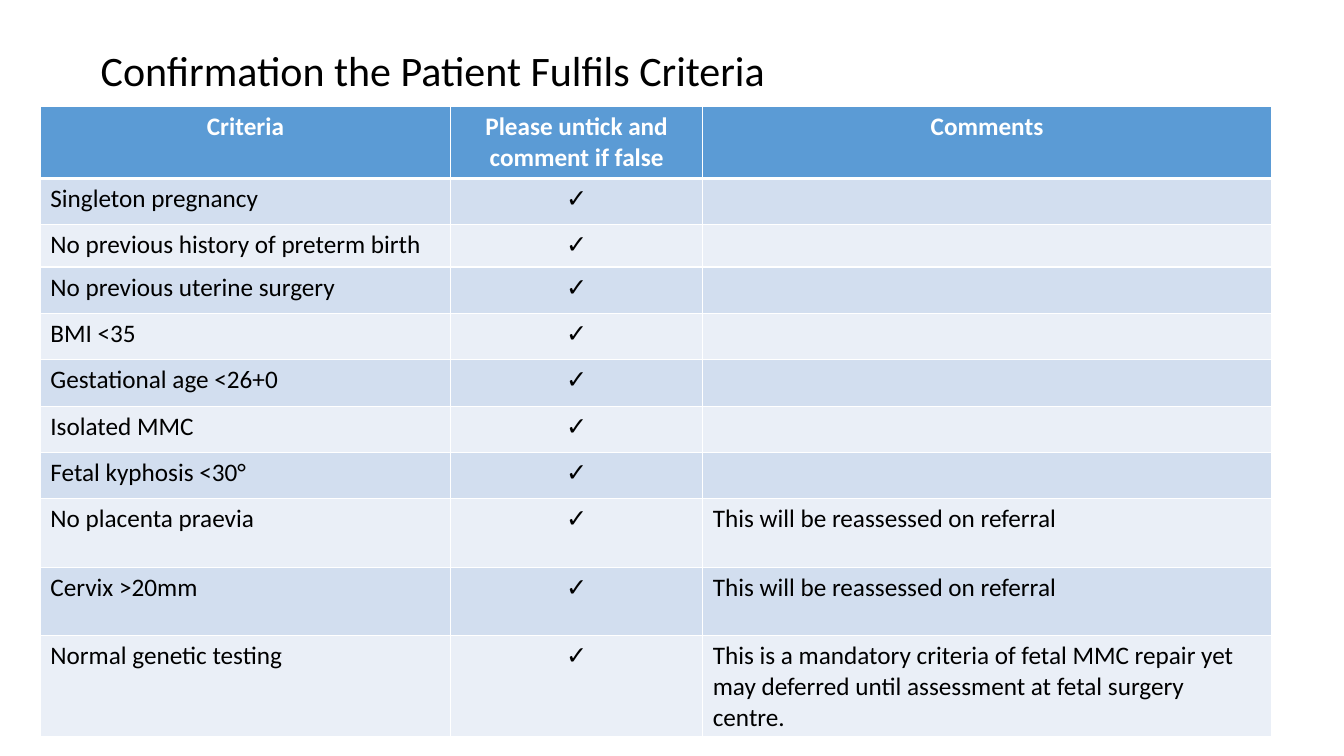
from lxml import etree
from pptx import Presentation
from pptx.dml.color import RGBColor
from pptx.enum.text import MSO_ANCHOR, PP_ALIGN
from pptx.oxml.ns import qn
from pptx.util import Inches, Pt

CENTER, LEFT = PP_ALIGN.CENTER, PP_ALIGN.LEFT
MIDDLE = MSO_ANCHOR.MIDDLE

BLACK = RGBColor(0x00, 0x00, 0x00)
WHITE = RGBColor(0xFF, 0xFF, 0xFF)
HEADER_BLUE = RGBColor(0x5B, 0x9B, 0xD5)
BAND_FILLS = (RGBColor(0xD2, 0xDE, 0xEF), RGBColor(0xEA, 0xEF, 0xF7))

FONT = "Calibri"
TICK = "✓"
TITLE = "Confirmation the Patient Fulfils Criteria"
HEADERS = ("Criteria", "Please untick and comment if false", "Comments")
REASSESSED = "This will be reassessed on referral"

# Criterion, comment, row height in inches
CRITERIA = (
    ("Singleton pregnancy", "", 0.46),
    ("No previous history of preterm birth", "", 0.42),
    ("No previous uterine surgery", "", 0.46),
    ("BMI <35", "", 0.46),
    ("Gestational age <26+0", "", 0.46),
    ("Isolated MMC", "", 0.46),
    ("Fetal kyphosis <30°", "", 0.46),
    ("No placenta praevia", REASSESSED, 0.68),
    ("Cervix >20mm", REASSESSED, 0.68),
    ("Normal genetic testing",
     "This is a mandatory criteria of fetal MMC repair yet may deferred "
     "until assessment at fetal surgery centre.", 0.77),
)
HEADER_HEIGHT = 0.71
COLUMN_WIDTHS = (4.07, 2.5, 5.64)


def format_paragraph(para, size, color, bold=False, align=LEFT):
    para.alignment = align
    # The paragraph font also sizes cells that hold no text
    for font in [para.font] + [span.font for span in para.runs]:
        font.name, font.size, font.bold = FONT, Pt(size), bold
        font.color.rgb = color


def set_borders(cell, bottom_width):
    """Draw white lines on all sides; they must precede the cell fill."""
    properties = cell._tc.get_or_add_tcPr()
    for side, width in (("L", 1), ("R", 1), ("T", 1), ("B", bottom_width)):
        line = etree.SubElement(properties, qn(f"a:ln{side}"), w=str(Pt(width)))
        fill = etree.SubElement(line, qn("a:solidFill"))
        etree.SubElement(fill, qn("a:srgbClr"), val=str(WHITE))


def add_title(page, left, top, width, height):
    box = page.shapes.add_textbox(*map(Inches, (left, top, width, height)))
    frame = box.text_frame
    frame.word_wrap = True
    frame.vertical_anchor = MIDDLE
    frame.text = TITLE
    para = frame.paragraphs[0]
    para.line_spacing = 0.9
    format_paragraph(para, 30, BLACK)


def add_criteria_table(page, left, top):
    rows = [HEADERS] + [(name, TICK, comment) for name, comment, _ in CRITERIA]
    heights = [HEADER_HEIGHT] + [height for _, _, height in CRITERIA]
    table = page.shapes.add_table(
        len(rows), len(HEADERS), Inches(left), Inches(top),
        Inches(sum(COLUMN_WIDTHS)), Inches(sum(heights))).table

    for column, width in zip(table.columns, COLUMN_WIDTHS):
        column.width = Inches(width)

    for row_index, (texts, height) in enumerate(zip(rows, heights)):
        table.rows[row_index].height = Inches(height)
        is_header = row_index == 0
        fill = HEADER_BLUE if is_header else BAND_FILLS[(row_index - 1) % 2]
        for column_index, text in enumerate(texts):
            cell = table.cell(row_index, column_index)
            cell.text_frame.text = text
            format_paragraph(
                cell.text_frame.paragraphs[0], 18,
                WHITE if is_header else BLACK, bold=is_header,
                align=CENTER if is_header or column_index == 1 else LEFT)
            set_borders(cell, 3 if is_header else 1)
            cell.fill.solid()
            cell.fill.fore_color.rgb = fill


def main():
    deck = Presentation()
    deck.slide_width, deck.slide_height = Inches(13.33), Inches(7.5)
    page = deck.slides.add_slide(deck.slide_layouts[6])
    add_title(page, 0.9, 0.17, 11.5, 1.11)
    add_criteria_table(page, 0.4, 1.06)
    deck.save("out.pptx")


if __name__ == "__main__":
    main()
